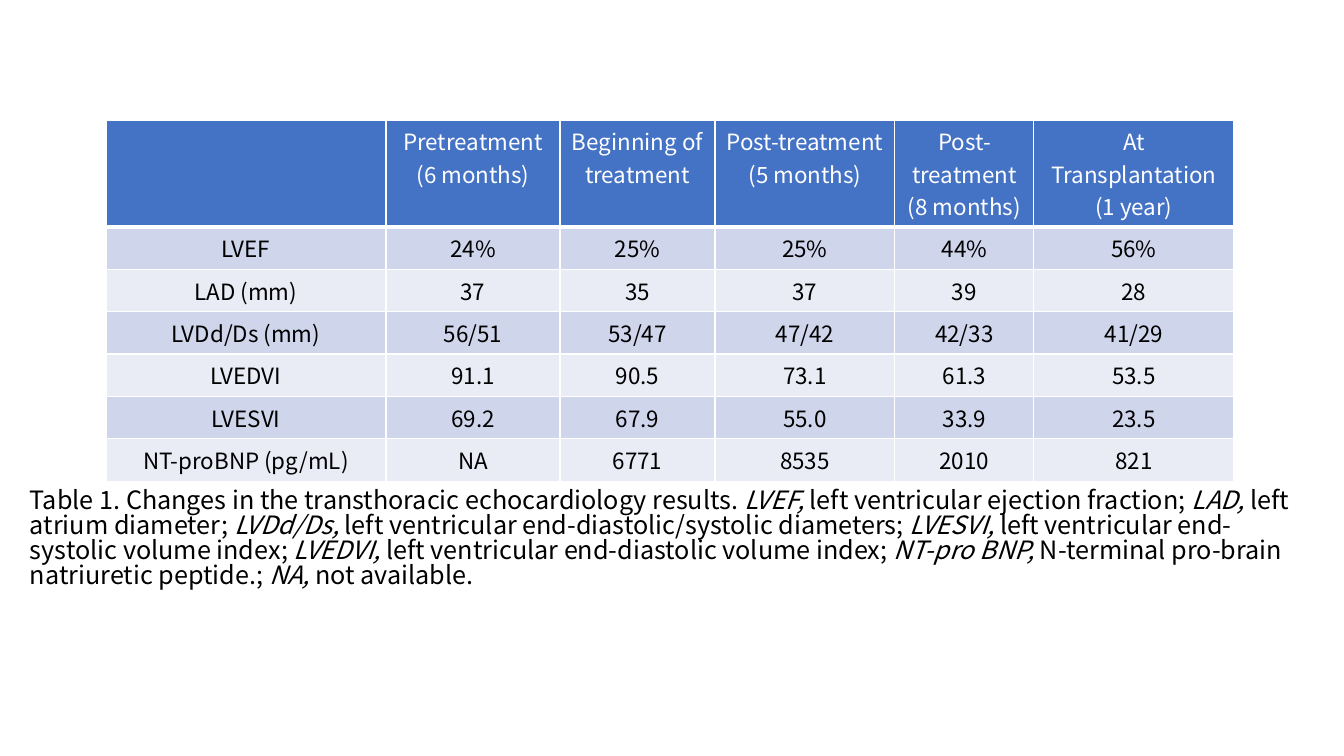
"""Build a slide with a table of echocardiology results and its caption."""
from lxml.etree import SubElement
from pptx import Presentation
from pptx.dml.color import RGBColor
from pptx.enum.text import MSO_AUTO_SIZE, PP_ALIGN
from pptx.oxml.ns import qn
from pptx.util import Pt

SCALE = 914400 / 100.8
FONT = "Noto Sans CJK JP"
COLORS = {"header": "4472C4", "odd": "CFD5EA", "even": "E9EBF5",
          "white": "FFFFFF", "black": "000000"}
HEADER_BORDERS = {"a:lnL": 1, "a:lnR": 1, "a:lnT": 1, "a:lnB": 3}
COLUMN_WIDTHS = [280, 174, 155, 180, 139, 200]
HEADER_HEIGHT, ROW_HEIGHT = 106, 42
RESULTS = [
    ["", "Pretreatment\n(6 months)", "Beginning of\ntreatment",
     "Post-treatment\n(5 months)", "Post-treatment\n(8 months)",
     "At Transplantation\n(1 year)"],
    ["LVEF", "24%", "25%", "25%", "44%", "56%"],
    ["LAD (mm)", "37", "35", "37", "39", "28"],
    ["LVDd/Ds (mm)", "56/51", "53/47", "47/42", "42/33", "41/29"],
    ["LVEDVI", "91.1", "90.5", "73.1", "61.3", "53.5"],
    ["LVESVI", "69.2", "67.9", "55.0", "33.9", "23.5"],
    ["NT-proBNP (pg/mL)", "NA", "6771", "8535", "2010", "821"],
]
CAPTION = [
    ("Table 1. Changes in the transthoracic echocardiology results. ", False),
    ("LVEF, ", True), ("left ventricular ejection fraction; ", False),
    ("LAD,", True), (" left atrium diameter; ", False),
    ("LVDd/Ds, ", True),
    ("left ventricular end-diastolic/systolic diameters; ", False),
    ("LVESVI, ", True),
    ("left ventricular end-systolic volume index; ", False),
    ("LVEDVI, ", True),
    ("left ventricular end-diastolic volume index; ", False),
    ("NT-pro BNP, ", True),
    ("N-terminal pro-brain natriuretic peptide.; ", False),
    ("NA, ", True), ("not available.", False),
]


def px(*lengths):
    return [round(length * SCALE) for length in lengths]


def style(font, color, **values):
    for name, value in {"name": FONT, **values}.items():
        setattr(font, name, value)
    font.color.rgb = RGBColor.from_string(COLORS[color])


deck = Presentation()
deck.slide_width, deck.slide_height = px(1344, 756)
page = deck.slides.add_slide(deck.slide_layouts[6])

table_height = HEADER_HEIGHT + ROW_HEIGHT * (len(RESULTS) - 1)
table = page.shapes.add_table(
    len(RESULTS), len(COLUMN_WIDTHS),
    *px(106, 120, sum(COLUMN_WIDTHS), table_height)).table
for column, width in zip(table.columns, px(*COLUMN_WIDTHS)):
    column.width = width

for row_index, values in enumerate(RESULTS):
    is_header = row_index == 0
    height = HEADER_HEIGHT if is_header else ROW_HEIGHT
    table.rows[row_index].height = px(height)[0]
    fill = "header" if is_header else "odd" if row_index % 2 else "even"
    for column_index, value in enumerate(values):
        cell = table.cell(row_index, column_index)
        cell.text = value
        if is_header:
            properties = cell._tc.get_or_add_tcPr()
            for tag, width in HEADER_BORDERS.items():
                line = SubElement(properties, qn(tag), w=str(Pt(width)))
                solid = SubElement(line, qn("a:solidFill"))
                SubElement(solid, qn("a:srgbClr"), val=COLORS["white"])
        cell.fill.solid()
        cell.fill.fore_color.rgb = RGBColor.from_string(COLORS[fill])
        for para in cell.text_frame.paragraphs:
            para.alignment = PP_ALIGN.CENTER
            style(para.font, "white" if is_header else "black",
                  size=Pt(16), bold=False)
            for span in para.runs:
                style(span.font, "white" if is_header else "black",
                      size=Pt(16), bold=False)

box = page.shapes.add_textbox(*px(20, 485, 1299, 132))
box.text_frame.word_wrap = True
box.text_frame.auto_size = MSO_AUTO_SIZE.SHAPE_TO_FIT_TEXT
para = box.text_frame.paragraphs[0]
para.line_spacing = 0.82
for text, is_italic in CAPTION:
    span = para.add_run()
    span.text = text
    style(span.font, "black", size=Pt(18), italic=is_italic)

deck.save("out.pptx")
